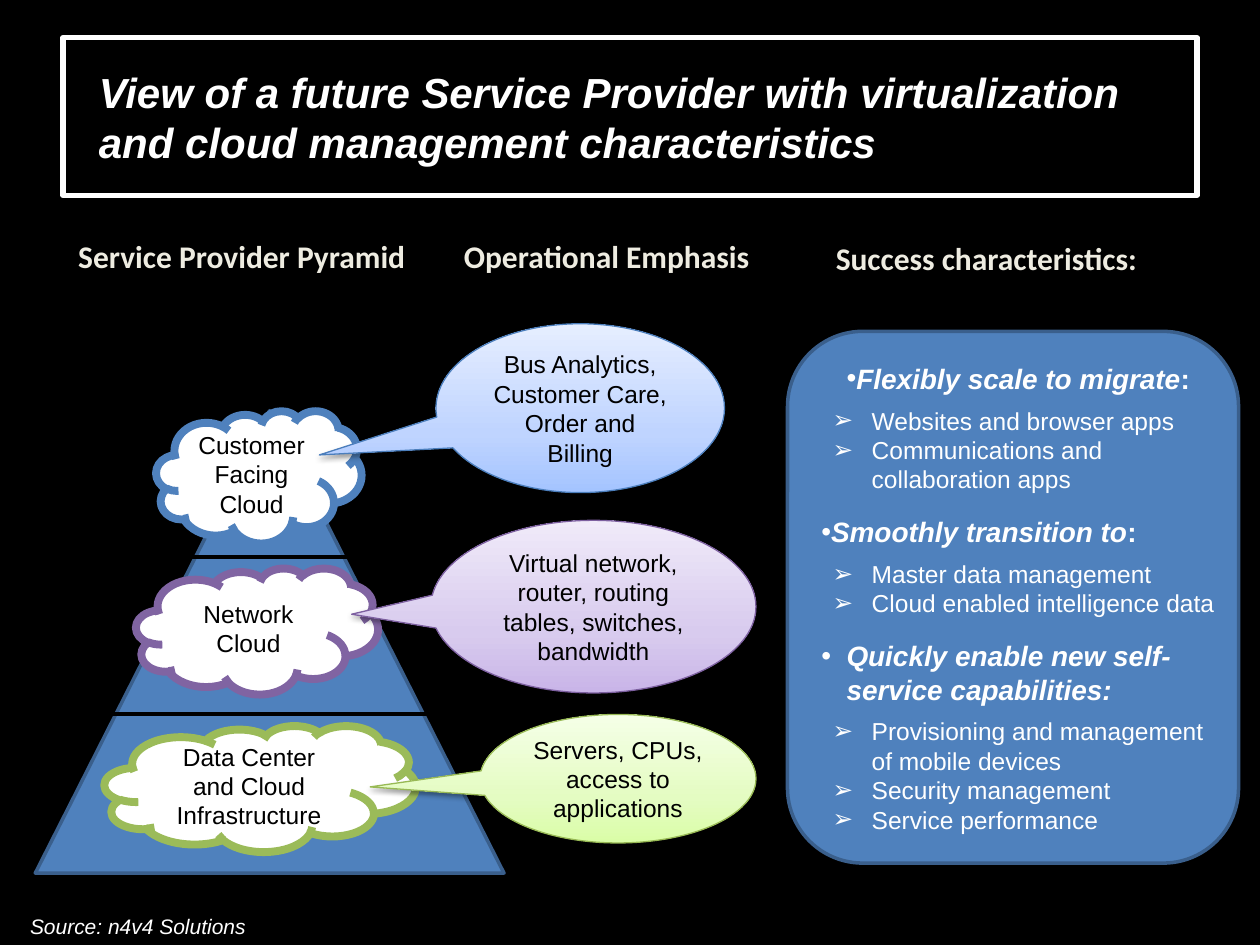
import pptx
import pptx.util
import pptx.dml.color
import pptx.enum.shapes
import pptx.enum.text
import pptx.oxml.ns
import lxml.etree

COLORS = {
    "black": "000000", "white": "FFFFFF", "cream": "EEECE1",
    "blue": "4F81BD", "navy": "3A5F8C", "purple": "8064A2", "green": "9BBB59",
    "blue edge": "4B7EBC", "purple edge": "7D60A0", "green edge": "98B955",
}
SHADES = {
    "blue": ["A4C4FF", "BFD4FF", "E6EEFF"],
    "purple": ["C9B5E8", "D8CBEE", "F0EAF9"],
    "green": ["DAFDA7", "E4FCC2", "F5FFE7"],
}
KINDS = pptx.enum.shapes.MSO_SHAPE
CENTER = pptx.enum.text.PP_ALIGN.CENTER
LEFT = pptx.enum.text.PP_ALIGN.LEFT
MIDDLE = pptx.enum.text.MSO_ANCHOR.MIDDLE
qn = pptx.oxml.ns.qn

deck = pptx.Presentation()
deck.slide_width = pptx.util.Inches(10)
deck.slide_height = pptx.util.Inches(7.5)
column = deck.slide_width / 100
row = deck.slide_height / 75
page = deck.slides.add_slide(deck.slide_layouts[6])
page.background.fill.solid()
page.background.fill.fore_color.rgb = pptx.dml.color.RGBColor.from_string(COLORS["black"])


def add_box(kind, cells, fill=None, line=None, weight=1):
    left, top, width, height = cells
    place = [round(n) for n in (left * column, top * row, width * column, height * row)]
    if kind is None:
        box = page.shapes.add_textbox(*place)
    else:
        box = page.shapes.add_shape(kind, *place)
        box.shadow.inherit = False
        box.fill.solid()
        box.fill.fore_color.rgb = pptx.dml.color.RGBColor.from_string(COLORS[fill])
        box.line.color.rgb = pptx.dml.color.RGBColor.from_string(COLORS[line])
        box.line.width = pptx.util.Pt(weight)
        box.text_frame.vertical_anchor = MIDDLE
    box.text_frame.word_wrap = True
    return box


def add_span(para, text, size, color, font="Arial", bold=False, italic=False, align=LEFT):
    para.alignment = align
    span = para.add_run()
    span.text = text
    span.font.name = font
    span.font.size = pptx.util.Pt(size)
    span.font.bold = bold
    span.font.italic = italic
    span.font.color.rgb = pptx.dml.color.RGBColor.from_string(COLORS[color])


title = add_box(KINDS.RECTANGLE, (5, 3, 90, 12.5), "black", "white", 3)
title.text_frame.margin_left = round(2.85 * column)
title_para = title.text_frame.paragraphs[0]
add_span(title_para, "View of a future Service Provider with virtualization", 24, "white", bold=True, italic=True)
title_para.add_line_break()
add_span(title_para, "and cloud management characteristics", 24, "white", bold=True, italic=True)

headings = [
    ("Service Provider Pyramid", (4.2, 18.3, 30, 4)),
    ("Operational Emphasis", (35.8, 18.3, 24.7, 4)),
    ("Success characteristics:", (63.3, 18.5, 30, 4)),
]
for text, cells in headings:
    heading = add_box(None, cells)
    add_span(heading.text_frame.paragraphs[0], text, 18, "cream", "Calibri", bold=True, align=CENTER)

add_box(KINDS.ISOSCELES_TRIANGLE, (2.8, 32.6, 37.2, 36.7), "blue", "navy", 2)
for start, end, level in [(7.8, 35.9, 44.2), (2, 42.5, 56.7)]:
    divider = page.shapes.add_connector(
        pptx.enum.shapes.MSO_CONNECTOR.STRAIGHT,
        round(start * column), round(level * row), round(end * column), round(level * row))
    divider.line.color.rgb = pptx.dml.color.RGBColor.from_string(COLORS["black"])
    divider.line.width = pptx.util.Pt(2.25)
    lxml.etree.SubElement(divider._element.spPr, qn("a:effectLst"))

tiers = [
    ("blue", "Customer Facing Cloud", (12.4, 32.6, 16.3, 10.5),
     "Bus Analytics, Customer Care, Order and Billing", (34.6, 25.7, 22.9, 13.4), (-0.904, 0.277)),
    ("purple", "Network Cloud", (10.8, 45.1, 19.2, 10),
     "Virtual network, router, routing tables, switches, bandwidth", (34.2, 41.3, 25.8, 13.7), (-0.744, 0.044)),
    ("green", "Data Center and Cloud Infrastructure", (8.3, 57.6, 24.7, 10),
     "Servers, CPUs, access to applications", (38.1, 56.7, 21.9, 10.2), (-0.898, 0.064)),
]
for hue, name, cloud_cells, emphasis, callout_cells, tip in tiers:
    cloud = add_box(KINDS.CLOUD, cloud_cells, "white", hue, 4.5)
    add_span(cloud.text_frame.paragraphs[0], name, 14, "black", align=CENTER)

    callout = add_box(KINDS.OVAL_CALLOUT, callout_cells, hue, hue + " edge", 0.75)
    callout.adjustments[0], callout.adjustments[1] = tip
    add_span(callout.text_frame.paragraphs[0], emphasis, 14, "black", align=CENTER)
    callout.fill.gradient()
    callout.fill.gradient_angle = 90
    stops = callout._element.spPr.find(".//" + qn("a:gsLst"))
    stops.clear()
    for position, shade in zip([0, 35, 100], SHADES[hue]):
        stop = lxml.etree.SubElement(stops, qn("a:gs"), pos=str(position * 1000))
        lxml.etree.SubElement(stop, qn("a:srgbClr"), val=shade)
    effects = callout._element.spPr.find(qn("a:effectLst"))
    shadow = lxml.etree.SubElement(
        effects, qn("a:outerShdw"), blurRad="40000", dist="20000", dir="5400000", rotWithShape="0")
    tint = lxml.etree.SubElement(shadow, qn("a:srgbClr"), val=COLORS["black"])
    lxml.etree.SubElement(tint, qn("a:alpha"), val="38000")

add_box(KINDS.ROUNDED_RECTANGLE, (62.5, 26.3, 35.8, 42.2), "blue", "navy", 2)
success = add_box(None, (64.2, 28.2, 33.2, 41))
groups = [
    ("Flexibly scale to migrate", ":", 0, 2,
     ["Websites and browser apps", "Communications and collaboration apps"]),
    ("Smoothly transition to", ":", 0, -2,
     ["Master data management", "Cloud enabled intelligence data"]),
    ("Quickly enable new self-service capabilities:", "", 2, -2,
     ["Provisioning and management of mobile devices", "Security management", "Service performance"]),
]
entries = []
for lead, ending, margin, indent, items in groups:
    entries.append((lead, ending, margin, indent, "•", 12))
    for number, item in enumerate(items):
        entries.append((item, "", 4, -3.1, "➢", 0 if number else 6))

for number, (text, ending, margin, indent, bullet, gap) in enumerate(entries):
    frame = success.text_frame
    para = frame.add_paragraph() if number else frame.paragraphs[0]
    is_lead = bullet == "•"
    size = 16 if is_lead else 14
    add_span(para, text, size, "white", bold=is_lead, italic=is_lead)
    if ending:
        add_span(para, ending, size, "white", bold=True)
    para.level = 0 if is_lead else 1
    para.space_before = pptx.util.Pt(gap)
    settings = para._p.get_or_add_pPr()
    settings.set("marL", str(round(margin * column)))
    settings.set("indent", str(round(indent * column)))
    lxml.etree.SubElement(settings, qn("a:buFont"), typeface="Arial")
    lxml.etree.SubElement(settings, qn("a:buChar"), char=bullet)

source = add_box(None, (1.4, 72, 19.7, 3))
source.text_frame.word_wrap = False
add_span(source.text_frame.paragraphs[0], "Source: n4v4 Solutions", 12, "white", italic=True)

deck.save("out.pptx")
